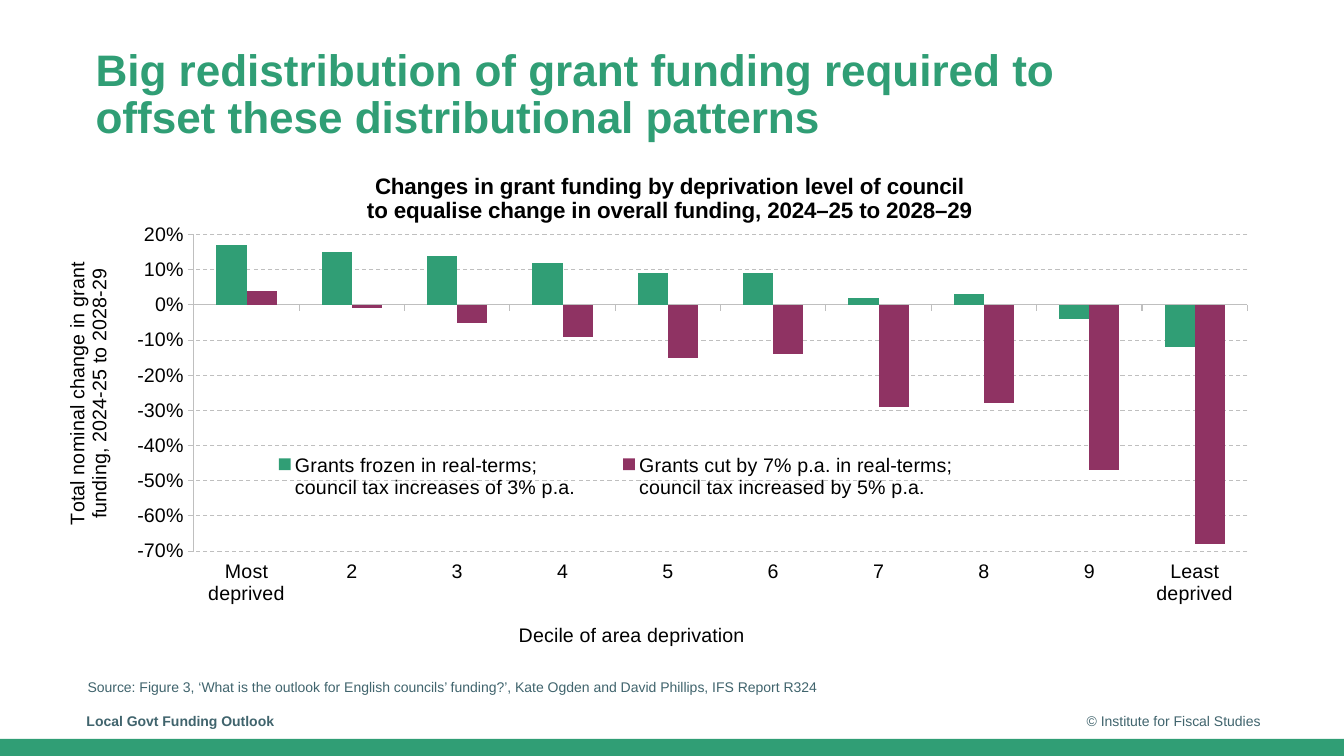
import pptx
import pptx.util
import pptx.chart.data
import pptx.dml.color
import pptx.enum.chart
import pptx.enum.dml
import pptx.enum.shapes
import pptx.enum.text
import pptx.oxml
import pptx.oxml.ns
from dataclasses import dataclass

# Content
HEADING = "Big redistribution of grant funding required to offset these distributional patterns"
SOURCE = ("Source: Figure 3, ‘What is the outlook for English councils’ funding?’, "
          "Kate Ogden and David Phillips, IFS Report R324")
FOOTER = "Local Govt Funding Outlook"
COPYRIGHT = "© Institute for Fiscal Studies"
CHART_TITLE = ("Changes in grant funding by deprivation level of council\n"
               "to equalise change in overall funding, 2024–25 to 2028–29")
DECILE_TITLE = "Decile of area deprivation"
CHANGE_TITLE = "Total nominal change in grant\nfunding, 2024-25 to 2028-29"
DECILES = ["Most deprived", *map(str, range(2, 10)), "Least deprived"]
SCENARIOS = {
    "Grants frozen in real-terms;\ncouncil tax increases of 3% p.a.":
        (0.17, 0.15, 0.14, 0.12, 0.09, 0.09, 0.02, 0.03, -0.04, -0.12),
    "Grants cut by 7% p.a. in real-terms;\ncouncil tax increased by 5% p.a.":
        (0.04, -0.01, -0.05, -0.09, -0.15, -0.14, -0.29, -0.28, -0.47, -0.68),
}


def rgb(code):
    return pptx.dml.color.RGBColor.from_string(code)


@dataclass(frozen=True)
class Theme:
    font: str = "Arial"
    green: str = "309E75"
    plum: str = "8F3363"
    slate: str = "40646D"
    black: str = "000000"
    grid: str = "BFBFBF"
    heading: float = 31.5
    chart_title: float = 16
    chart_text: float = 14
    small: float = 10


THEME = Theme()
WIDTH, HEIGHT = 13.33, 7.5
BAR = 0.17
FOOT_TOP, FOOT_HEIGHT = 6.95, 0.4
inches = pptx.util.Inches
MIDDLE = pptx.enum.text.MSO_ANCHOR.MIDDLE
RIGHT = pptx.enum.text.PP_ALIGN.RIGHT


def style_font(font, size, color, bold=False):
    font.name, font.size, font.bold = THEME.font, pptx.util.Pt(size), bold
    font.color.rgb = rgb(color)


def add_text(page, text, area, size, color, bold=False, anchor=MIDDLE, align=None, spacing=None):
    frame = page.shapes.add_textbox(*map(inches, area)).text_frame
    frame.word_wrap, frame.vertical_anchor = True, anchor
    para = frame.paragraphs[0]
    para.text, para.alignment, para.line_spacing = text, align, spacing
    style_font(para.font, size, color, bold)


def place(element, after=None, inner=False, **shares):
    """Fix a chart part at x, y (and w, h) as shares of the chart's size."""
    for old in element.findall(pptx.oxml.ns.qn("c:layout")):
        element.remove(old)
    target = '<c:layoutTarget val="inner"/>' if inner else ""
    modes = '<c:xMode val="edge"/><c:yMode val="edge"/>'
    sizes = "".join(f'<c:{key} val="{share}"/>' for key, share in shares.items())
    layout = pptx.oxml.parse_xml(
        f'<c:layout {pptx.oxml.ns.nsdecls("c")}><c:manualLayout>{target}{modes}{sizes}'
        "</c:manualLayout></c:layout>")
    if after:
        element.find(pptx.oxml.ns.qn(after)).addnext(layout)
    else:
        element.insert(0, layout)


def write_title(title, text, size, x, y, bold=False):
    title.text_frame.text = text
    for para in title.text_frame.paragraphs:
        style_font(para.font, size, THEME.black, bold)
        for span in para.runs:
            style_font(span.font, size, THEME.black, bold)
    place(title._element, "c:tx", x=x, y=y)


def style_line(line):
    line.color.rgb, line.width = rgb(THEME.grid), pptx.util.Pt(0.75)


def add_funding_chart(page, area):
    data = pptx.chart.data.CategoryChartData(number_format="0%")
    data.categories = DECILES
    for name, values in SCENARIOS.items():
        data.add_series(name, values)
    kind = pptx.enum.chart.XL_CHART_TYPE.COLUMN_CLUSTERED
    chart = page.shapes.add_chart(kind, *map(inches, area), data).chart
    style_font(chart.font, THEME.chart_text, THEME.black)

    # Columns
    plot = chart.plots[0]
    plot.gap_width, plot.overlap, plot.vary_by_categories = 150, 0, False
    for series, color in zip(plot.series, (THEME.green, THEME.plum)):
        series.invert_if_negative = False
        series.format.fill.solid()
        series.format.fill.fore_color.rgb = rgb(color)
    place(chart._chartSpace.chart.plotArea, inner=True, x=0.125, y=0.161, w=0.836, h=0.633)

    # Axes
    deciles, change = chart.category_axis, chart.value_axis
    for axis in (deciles, change):
        axis.major_tick_mark = pptx.enum.chart.XL_TICK_MARK.OUTSIDE
        axis.minor_tick_mark = pptx.enum.chart.XL_TICK_MARK.NONE
        style_line(axis.format.line)
    deciles.tick_label_position = pptx.enum.chart.XL_TICK_LABEL_POSITION.LOW
    change.minimum_scale, change.maximum_scale, change.major_unit = -0.7, 0.2, 0.1
    change.tick_labels.number_format = "0%"
    change.tick_labels.number_format_is_linked = False
    change.has_major_gridlines = True
    style_line(change.major_gridlines.format.line)
    change.major_gridlines.format.line.dash_style = pptx.enum.dml.MSO_LINE.DASH

    # Titles and legend
    write_title(chart.chart_title, CHART_TITLE, THEME.chart_title, 0.26, 0.03, bold=True)
    write_title(deciles.axis_title, DECILE_TITLE, THEME.chart_text, 0.38, 0.93)
    write_title(change.axis_title, CHANGE_TITLE, THEME.chart_text, 0.02, 0.21)
    body = change.axis_title._element.find(".//" + pptx.oxml.ns.qn("a:bodyPr"))
    body.set("rot", "-5400000")
    body.set("vert", "horz")
    chart.has_legend = True
    chart.legend.position = pptx.enum.chart.XL_LEGEND_POSITION.TOP
    chart.legend.include_in_layout = False
    style_font(chart.legend.font, THEME.chart_text, THEME.black)
    place(chart.legend._element, "c:legendPos", x=0.16, y=0.59, w=0.6, h=0.11)


def main():
    deck = pptx.Presentation()
    deck.slide_width, deck.slide_height = inches(WIDTH), inches(HEIGHT)
    page = deck.slides.add_slide(deck.slide_layouts[6])

    # Footer
    bar = page.shapes.add_shape(pptx.enum.shapes.MSO_SHAPE.RECTANGLE,
                                *map(inches, (0, HEIGHT - BAR, WIDTH, BAR)))
    bar.shadow.inherit = False
    bar.fill.solid()
    bar.fill.fore_color.rgb = rgb(THEME.green)
    bar.line.fill.background()
    add_text(page, FOOTER, (0.76, FOOT_TOP, 8.84, FOOT_HEIGHT), THEME.small, THEME.slate, bold=True)
    add_text(page, COPYRIGHT, (9.6, FOOT_TOP, 3, FOOT_HEIGHT), THEME.small, THEME.slate, align=RIGHT)

    # Heading, source and chart
    add_text(page, HEADING, (0.85, 0.43, 10.59, 0.63), THEME.heading, THEME.green, bold=True,
             anchor=pptx.enum.text.MSO_ANCHOR.TOP, spacing=0.9)
    add_text(page, SOURCE, (0.77, 6.49, 7.67, 0.65), THEME.small, THEME.slate)
    add_funding_chart(page, (0.36, 1.53, 12.5, 4.96))
    deck.save("out.pptx")


if __name__ == "__main__":
    main()
